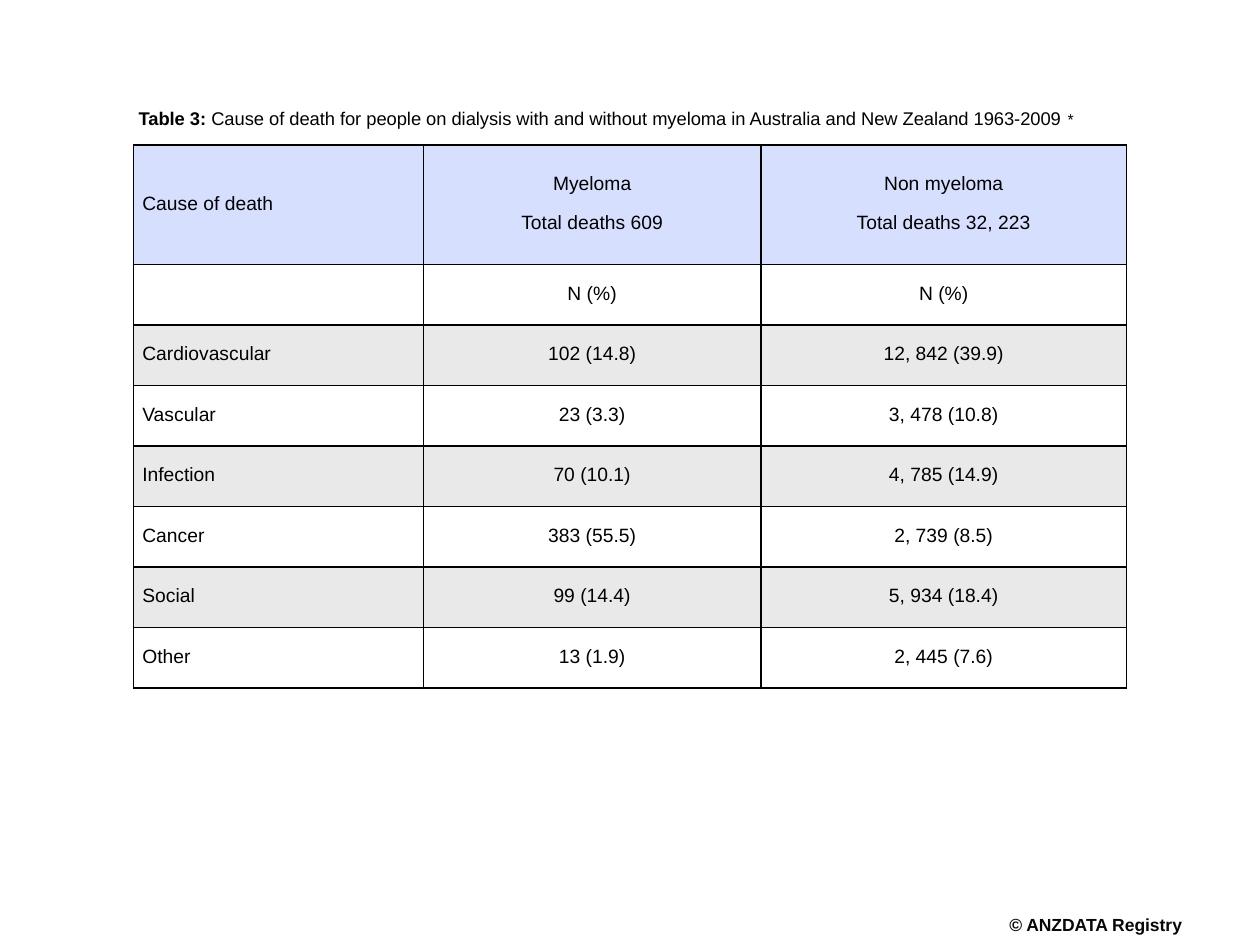
from lxml import etree
from pptx import Presentation
from pptx.dml.color import RGBColor
from pptx.enum.text import MSO_ANCHOR, MSO_AUTO_SIZE, PP_ALIGN
from pptx.oxml.ns import qn
from pptx.util import Inches, Pt

LEFT, CENTER = PP_ALIGN.LEFT, PP_ALIGN.CENTER
TOP, MIDDLE = MSO_ANCHOR.TOP, MSO_ANCHOR.MIDDLE
NO_AUTOFIT = MSO_AUTO_SIZE.NONE

FONT = "Arial"
COLORS = {
    "text": "000000",
    "copyright": "080808",
    "border": "000000",
    "header": "D6E0FE",
    "band": "E9E9E9",
    "plain": "FFFFFF",
}

COLUMNS = [2.3, 2.68, 2.9]
HEADER_HEIGHT, ROW_HEIGHT = 0.95, 0.48
ROWS = [
    ("Cause of death", "Myeloma\nTotal deaths 609", "Non myeloma\nTotal deaths 32, 223"),
    ("", "N (%)", "N (%)"),
    ("Cardiovascular", "102 (14.8)", "12, 842 (39.9)"),
    ("Vascular", "23 (3.3)", "3, 478 (10.8)"),
    ("Infection", "70 (10.1)", "4, 785 (14.9)"),
    ("Cancer", "383 (55.5)", "2, 739 (8.5)"),
    ("Social", "99 (14.4)", "5, 934 (18.4)"),
    ("Other", "13 (1.9)", "2, 445 (7.6)"),
]


def rgb(name):
    return RGBColor.from_string(COLORS[name])


def add_run(p, text, size, bold=False, color="text"):
    r = p.add_run()
    r.text = text
    r.font.name = FONT
    r.font.size = Pt(size)
    r.font.bold = bold
    r.font.color.rgb = rgb(color)


def set_margins(frame, horizontal, vertical):
    frame.margin_left = frame.margin_right = Inches(horizontal)
    frame.margin_top = frame.margin_bottom = Inches(vertical)


def set_borders(cell, width=1):
    """Draw all four sides; the lines must precede the fill in the XML."""
    tc_pr = cell._tc.get_or_add_tcPr()
    for i, side in enumerate(("lnL", "lnR", "lnT", "lnB")):
        line = etree.Element(qn(f"a:{side}"), w=str(Pt(width)))
        fill = etree.SubElement(line, qn("a:solidFill"))
        etree.SubElement(fill, qn("a:srgbClr"), val=COLORS["border"])
        tc_pr.insert(i, line)


def fill_cell(cell, text, align, color):
    cell.fill.solid()
    cell.fill.fore_color.rgb = rgb(color)
    set_borders(cell)
    set_margins(cell, 0.07, 0)
    cell.vertical_anchor = MIDDLE
    tf = cell.text_frame
    for i, line in enumerate(text.split("\n")):
        p = tf.add_paragraph() if i else tf.paragraphs[0]
        p.alignment = align
        p.line_spacing = 0.85
        if i:
            p.space_before = Pt(12)
        if line:
            add_run(p, line, 11)


def row_color(row):
    if row == 0:
        return "header"
    return "plain" if row % 2 else "band"


def add_caption(s, left, top, width, height):
    sp = s.shapes.title
    sp.left, sp.top, sp.width, sp.height = map(Inches, (left, top, width, height))
    tf = sp.text_frame
    tf.word_wrap = True
    tf.auto_size = NO_AUTOFIT
    tf.vertical_anchor = TOP
    set_margins(tf, 0.04, 0.04)
    p = tf.paragraphs[0]
    p.alignment = LEFT
    add_run(p, "Table 3:", 10.5, bold=True)
    add_run(p, " Cause of death for people on dialysis with and without myeloma"
               " in Australia and New Zealand 1963-2009 ", 10.5)
    add_run(p, "*", 9)


def add_death_table(s, left, top):
    heights = [HEADER_HEIGHT] + [ROW_HEIGHT] * (len(ROWS) - 1)
    box = map(Inches, (left, top, sum(COLUMNS), sum(heights)))
    table = s.shapes.add_table(len(ROWS), len(COLUMNS), *box).table
    for column, width in zip(table.columns, COLUMNS):
        column.width = Inches(width)
    for row, height in zip(table.rows, heights):
        row.height = Inches(height)
    for r, texts in enumerate(ROWS):
        for c, text in enumerate(texts):
            fill_cell(table.cell(r, c), text, CENTER if c else LEFT, row_color(r))


def add_copyright(s, left, top, width, height):
    sp = s.shapes.add_textbox(*map(Inches, (left, top, width, height)))
    tf = sp.text_frame
    tf.word_wrap = False
    set_margins(tf, 0, 0)
    p = tf.paragraphs[0]
    p.alignment = CENTER
    p.line_spacing = 0.85
    add_run(p, "© ANZDATA Registry", 10, bold=True, color="copyright")


def main():
    prs = Presentation()
    prs.slide_width, prs.slide_height = Inches(10), Inches(7.5)
    s = prs.slides.add_slide(prs.slide_layouts[5])
    left, table_top, caption_height = 1.06, 1.15, 0.34
    add_copyright(s, 7.99, 7.28, 1.41, 0.17)
    add_death_table(s, left, table_top)
    add_caption(s, left, table_top - caption_height, sum(COLUMNS), caption_height)
    prs.save("out.pptx")


if __name__ == "__main__":
    main()
